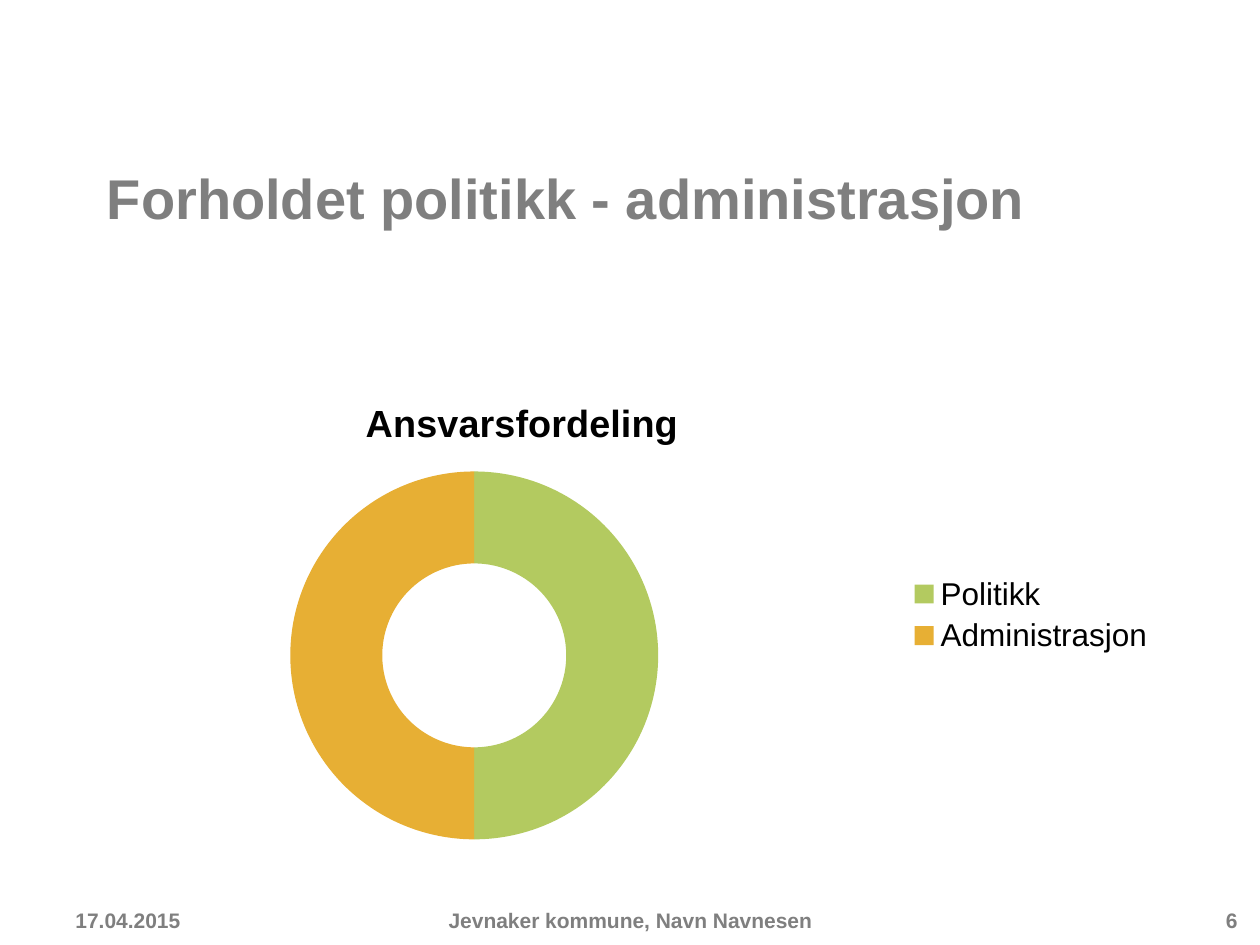
"""Build a slide with a doughnut chart of how responsibility is shared."""
from dataclasses import dataclass

from lxml import etree
from pptx import Presentation
from pptx import util as u
from pptx.chart.chart import Chart
from pptx.chart.data import CategoryChartData
from pptx.dml.color import RGBColor
from pptx.enum import chart as charts
from pptx.enum import text
from pptx.oxml.ns import qn
from pptx.slide import Slide


@dataclass(frozen=True)
class Theme:
    font: str = "Arial"
    grey: str = "7F7F7F"
    black: str = "000000"
    slices: tuple[str, ...] = ("B3CA60", "E7AF34")
    title_size: float = 32
    chart_title_size: float = 21.6
    legend_size: float = 18
    footer_size: float = 12


@dataclass(frozen=True)
class Label:
    words: str
    left: float
    top: float
    width: float
    height: float
    size: float
    align: text.PP_ALIGN = text.PP_ALIGN.LEFT
    anchor: text.MSO_ANCHOR = text.MSO_ANCHOR.MIDDLE


THEME = Theme()
FOOTER_TOP, FOOTER_HEIGHT = 7.1, 0.4
LABELS = (
    Label("Forholdet politikk - administrasjon", 0.75, 1.25, 8.92, 0.84,
          THEME.title_size, anchor=text.MSO_ANCHOR.TOP),
    Label("17.04.2015", 0.5, FOOTER_TOP, 1.19, FOOTER_HEIGHT, THEME.footer_size),
    Label("Jevnaker kommune, Navn Navnesen", 2.09, FOOTER_TOP, 5.83, FOOTER_HEIGHT,
          THEME.footer_size, text.PP_ALIGN.CENTER),
    Label("6", 9.02, FOOTER_TOP, 0.9, FOOTER_HEIGHT, THEME.footer_size,
          text.PP_ALIGN.RIGHT),
)
SHARES = {"Politikk": 50, "Administrasjon": 50}


def style_font(font: text.PP_ALIGN, size: float, color: str, bold: bool) -> None:
    """Set typeface, size, colour and weight."""
    font.name, font.size, font.bold = THEME.font, u.Pt(size), bold
    font.color.rgb = RGBColor.from_string(color)


def draw_label(page: Slide, label: Label) -> None:
    """Add one line of bold grey text."""
    box = page.shapes.add_textbox(u.Inches(label.left), u.Inches(label.top),
                                  u.Inches(label.width), u.Inches(label.height))
    frame = box.text_frame
    frame.word_wrap = True
    frame.vertical_anchor = label.anchor
    para = frame.paragraphs[0]
    para.text, para.alignment = label.words, label.align
    style_font(para.font, label.size, THEME.grey, True)


def place_chart_title(chart: Chart, x: float, y: float) -> None:
    """Fix the chart title's corner as fractions of the chart area."""
    layout = chart.chart_title._element.find(qn("c:layout"))
    manual = etree.SubElement(layout, qn("c:manualLayout"))
    for tag, value in (("xMode", "edge"), ("yMode", "edge"), ("x", x), ("y", y)):
        etree.SubElement(manual, qn(f"c:{tag}")).set("val", str(value))


def draw_doughnut(page: Slide) -> None:
    """Add the doughnut chart with its title and legend."""
    data = CategoryChartData()
    data.categories = list(SHARES)
    data.add_series("Series 1", list(SHARES.values()))
    chart = page.shapes.add_chart(
        charts.XL_CHART_TYPE.DOUGHNUT, u.Inches(0.35), u.Inches(2.96),
        u.Inches(8.92), u.Inches(3.84), data).chart
    style_font(chart.font, THEME.legend_size, THEME.black, False)

    chart.has_title = True
    para = chart.chart_title.text_frame.paragraphs[0]
    para.text = "Ansvarsfordeling"
    style_font(para.font, THEME.chart_title_size, THEME.black, True)
    place_chart_title(chart, 0.28, 0.04)

    chart.has_legend = True
    chart.legend.position = charts.XL_LEGEND_POSITION.RIGHT
    chart.legend.include_in_layout = False

    plot = chart.plots[0]
    plot.vary_by_categories = True
    for index, color in enumerate(THEME.slices):
        fill = plot.series[0].points[index].format.fill
        fill.solid()
        fill.fore_color.rgb = RGBColor.from_string(color)


def main() -> None:
    """Build and save the deck."""
    deck = Presentation()
    deck.slide_width, deck.slide_height = u.Inches(10), u.Inches(7.5)
    page = deck.slides.add_slide(deck.slide_layouts[6])
    draw_doughnut(page)
    for label in LABELS:
        draw_label(page, label)
    deck.save("out.pptx")


if __name__ == "__main__":
    main()
